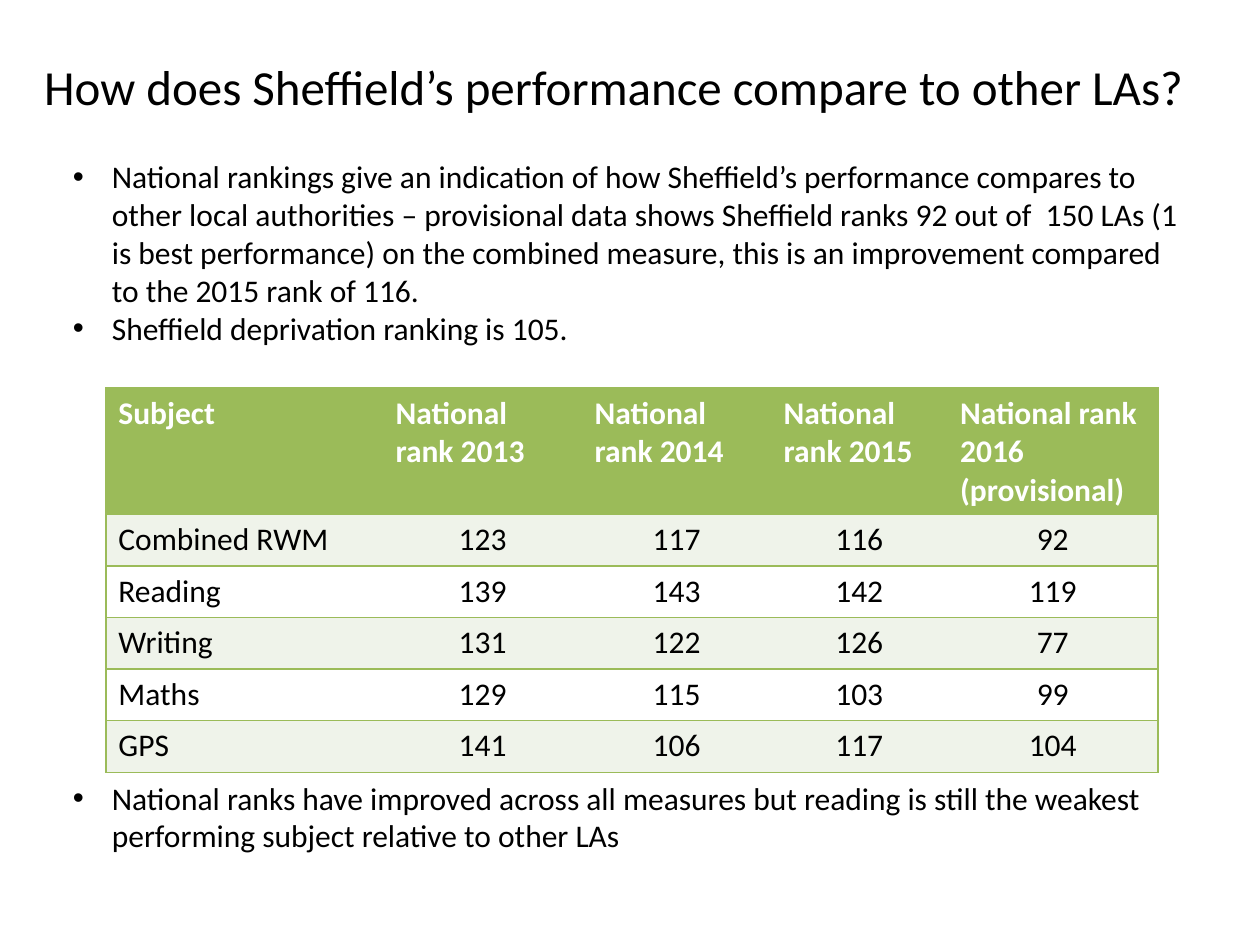
from dataclasses import dataclass

from lxml.etree import SubElement
from pptx import Presentation
from pptx.dml.color import RGBColor
from pptx.enum.text import MSO_ANCHOR, PP_ALIGN
from pptx.oxml.ns import qn
from pptx.util import Inches, Pt

# Content
TITLE = "How does Sheffield’s performance compare to other LAs?"
INTRO = [
    "National rankings give an indication of how Sheffield’s performance compares to "
    "other local authorities – provisional data shows Sheffield ranks 92 out of  150 LAs "
    "(1 is best performance) on the combined measure, this is an improvement compared "
    "to the 2015 rank of 116.",
    "Sheffield deprivation ranking is 105.",
]
CONCLUSION = [
    "National ranks have improved across all measures but reading is still the weakest "
    "performing subject relative to other LAs",
]
RANKINGS = [
    ("Subject", "National rank 2013", "National rank 2014", "National rank 2015",
     "National rank 2016 (provisional)"),
    ("Combined RWM", 123, 117, 116, 92),
    ("Reading", 139, 143, 142, 119),
    ("Writing", 131, 122, 126, 77),
    ("Maths", 129, 115, 103, 99),
    ("GPS", 141, 106, 117, 104),
]
COLUMN_WIDTHS = (2.2, 1.58, 1.5, 1.4, 1.67)
ROW_HEIGHT = 0.41


@dataclass(frozen=True)
class Theme:
    font: str = "Calibri"
    title_size: int = 28
    body_size: int = 18
    text: str = "000000"
    header_text: str = "FFFFFF"
    accent: str = "9BBB59"
    band: str = "EFF3EA"
    plain: str = "FFFFFF"
    border_width: int = 1


theme = Theme()


def style(para, size, color=theme.text, bold=False, align=PP_ALIGN.LEFT):
    para.alignment = align
    para.font.name = theme.font
    para.font.size = Pt(size)
    para.font.bold = bold
    para.font.color.rgb = RGBColor.from_string(color)


def add_text_box(page, left, top, width, height):
    box = page.shapes.add_textbox(*map(Inches, (left, top, width, height)))
    box.text_frame.word_wrap = True
    return box.text_frame


def add_bullets(page, lines, top, height):
    frame = add_text_box(page, 0.48, top, 9.06, height)
    frame.text = "\n".join(lines)
    for para in frame.paragraphs:
        style(para, theme.body_size)
        properties = para._p.get_or_add_pPr()
        properties.set("marL", str(Inches(0.31)))
        properties.set("indent", str(Inches(-0.31)))
        SubElement(properties, qn("a:buFont"), typeface="Arial")
        SubElement(properties, qn("a:buChar"), char="•")


def set_borders(cell, sides):
    """Draw the given sides (L, R, T, B) and hide the others."""
    properties = cell._tc.get_or_add_tcPr()
    for position, side in enumerate("LRTB"):
        line = SubElement(properties, qn(f"a:ln{side}"), w=str(Pt(theme.border_width)))
        if side in sides:
            fill = SubElement(line, qn("a:solidFill"))
            SubElement(fill, qn("a:srgbClr"), val=theme.accent)
        else:
            SubElement(line, qn("a:noFill"))
        properties.insert(position, line)  # borders come before the fill


def add_rankings(page, left, top):
    row_count, column_count = len(RANKINGS), len(COLUMN_WIDTHS)
    table = page.shapes.add_table(
        row_count, column_count, Inches(left), Inches(top),
        Inches(sum(COLUMN_WIDTHS)), Inches(ROW_HEIGHT * row_count)).table
    for column, width in zip(table.columns, COLUMN_WIDTHS):
        column.width = Inches(width)
    for r, values in enumerate(RANKINGS):
        table.rows[r].height = Inches(ROW_HEIGHT)
        header = r == 0
        fill = theme.accent if header else theme.band if r % 2 else theme.plain
        for c, value in enumerate(values):
            cell = table.cell(r, c)
            cell.text = str(value)
            style(cell.text_frame.paragraphs[0], theme.body_size,
                  color=theme.header_text if header else theme.text, bold=header,
                  align=PP_ALIGN.LEFT if header or c == 0 else PP_ALIGN.CENTER)
            cell.fill.solid()
            cell.fill.fore_color.rgb = RGBColor.from_string(fill)
            sides = "TB" + ("L" if c == 0 else "") + ("R" if c == column_count - 1 else "")
            set_borders(cell, sides)


def main():
    deck = Presentation()
    deck.slide_width, deck.slide_height = Inches(10), Inches(7.5)
    page = deck.slides.add_slide(deck.slide_layouts[6])

    # Title
    title = add_text_box(page, 0.2, 0.06, 9.34, 1.25)
    title.vertical_anchor = MSO_ANCHOR.MIDDLE
    title.text = TITLE
    style(title.paragraphs[0], theme.title_size, align=PP_ALIGN.CENTER)

    # Bullets above and below the table of ranks
    add_bullets(page, INTRO, top=1.2, height=1.62)
    add_rankings(page, left=0.84, top=3.08)
    add_bullets(page, CONCLUSION, top=6.13, height=0.71)

    deck.save("out.pptx")


if __name__ == "__main__":
    main()
